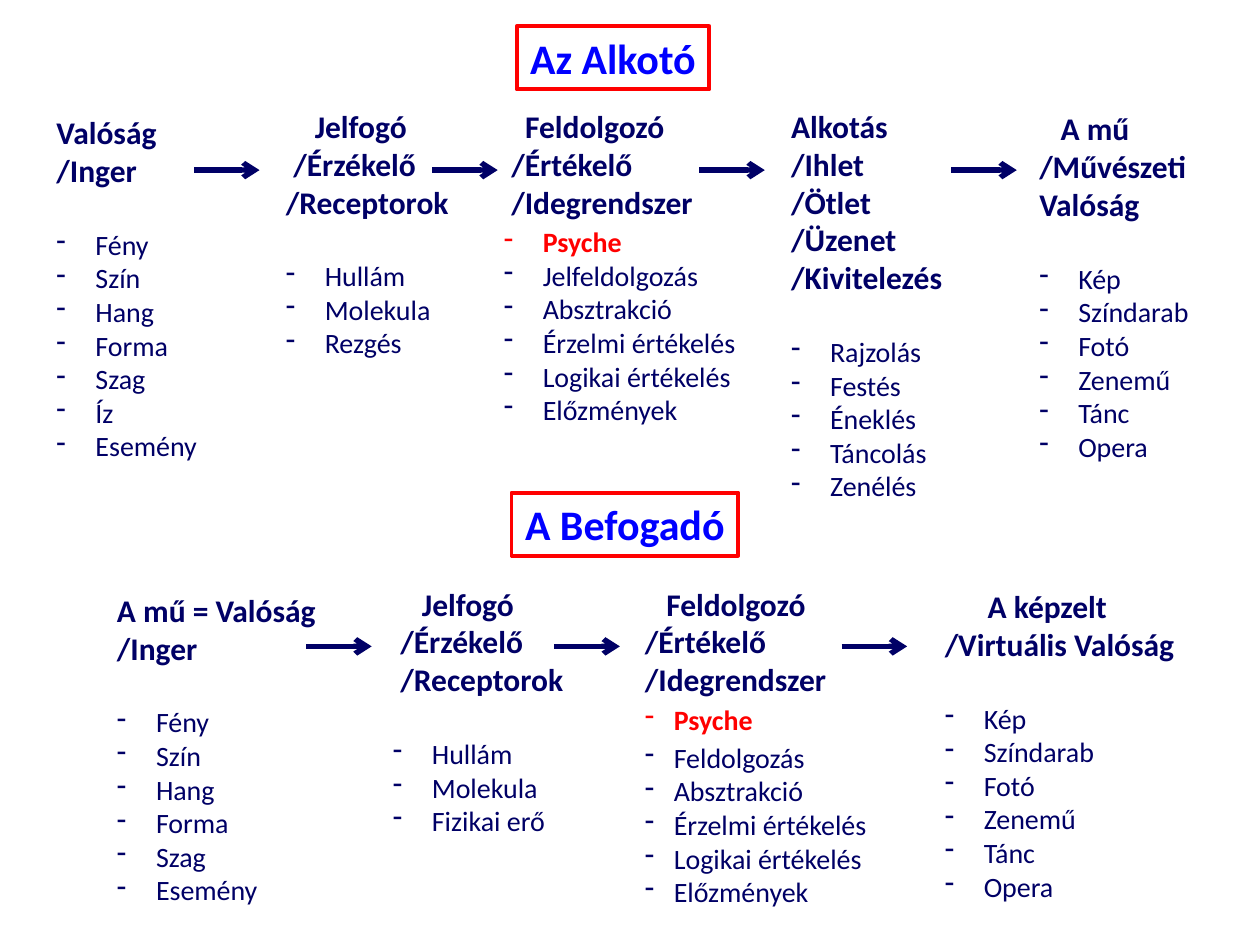
from pptx import Presentation
from pptx.dml.color import RGBColor
from pptx.enum.shapes import MSO_CONNECTOR
from pptx.enum.text import MSO_ANCHOR, MSO_AUTO_SIZE, PP_ALIGN
from pptx.oxml.ns import qn
from pptx.util import Inches, Pt
from lxml.etree import SubElement

NAVY = RGBColor(0x00, 0x00, 0x66)
BLUE = RGBColor(0x00, 0x00, 0xFF)
RED = RGBColor(0xFF, 0x00, 0x00)
FONT = "Calibri"
ARROW_LENGTH = 0.52
LIST_GAP = 22     # points, one heading line
TALL_GAP = 2.5    # points, extra lead above a tall list row

# Columns: box, headings as (indent, text), list items, list indent, tall rows.
# Tall rows follow the headings directly; other lists start after a gap.
CREATOR_COLUMNS = [
    ((0.35, 0.85, 1.33, 2.89), [(0, "Valóság"), (0, "/Inger")],
     ["Fény", "Szín", "Hang", "Forma", "Szag", "Íz", "Esemény"], 0.31, 0),
    ((2.17, 0.8, 1.5, 2.83),
     [(0.23, "Jelfogó"), (0.06, "/Érzékelő"), (0, "/Receptorok")],
     ["Hullám", "Molekula", "Rezgés"], 0.31, 0),
    ((3.9, 0.8, 2.07, 2.66),
     [(0.17, "Feldolgozó"), (0.06, "/Értékelő"), (0.06, "/Idegrendszer")],
     ["Psyche", "Jelfeldolgozás", "Absztrakció", "Érzelmi értékelés",
      "Logikai értékelés", "Előzmények"], 0.31, 1),
    ((6.18, 0.8, 1.41, 3.53),
     [(0, "Alkotás"), (0, "/Ihlet"), (0, "/Ötlet"), (0, "/Üzenet"),
      (0, "/Kivitelezés")],
     ["Rajzolás", "Festés", "Éneklés", "Táncolás", "Zenélés"], 0.31, 0),
    ((8.15, 0.82, 1.4, 3.53),
     [(0.17, "A mű"), (0, "/Művészeti"), (0, "Valóság")],
     ["Kép", "Színdarab", "Fotó", "Zenemű", "Tánc", "Opera"], 0.31, 0),
]
RECEIVER_COLUMNS = [
    ((0.83, 4.64, 1.79, 2.63), [(0, "A mű = Valóság"), (0, "/Inger")],
     ["Fény", "Szín", "Hang", "Forma", "Szag", "Esemény"], 0.31, 0),
    ((3.02, 4.59, 1.56, 2.42),
     [(0.23, "Jelfogó"), (0.06, "/Érzékelő"), (0.06, "/Receptorok")],
     ["Hullám", "Molekula", "Fizikai erő"], 0.31, 0),
    ((5.02, 4.59, 1.97, 2.69),
     [(0.17, "Feldolgozó"), (0, "/Értékelő"), (0, "/Idegrendszer")],
     ["Psyche", "Feldolgozás", "Absztrakció", "Érzelmi értékelés",
      "Logikai értékelés", "Előzmények"], 0.23, 2),
    ((7.4, 4.61, 2.04, 2.89),
     [(0.34, "A képzelt"), (0, "/Virtuális Valóság")],
     ["Kép", "Színdarab", "Fotó", "Zenemű", "Tánc", "Opera"], 0.31, 0),
]


def add_span(para, text, size, color, bold):
    span = para.add_run()
    span.text = text
    span.font.name = FONT
    span.font.size = Pt(size)
    span.font.bold = bold
    span.font.color.rgb = color


def set_indent(para, left, hanging=0):
    properties = para._p.get_or_add_pPr()
    properties.set("marL", str(Inches(left)))
    properties.set("indent", str(-Inches(hanging)))
    return properties


def add_column(slide, box, headings, items, indent, tall_rows):
    """Bold headings above a dashed list."""
    frame = slide.shapes.add_textbox(*map(Inches, box)).text_frame
    frame.word_wrap = True
    frame.margin_right = 0

    # Headings
    for number, (left, text) in enumerate(headings):
        para = frame.add_paragraph() if number else frame.paragraphs[0]
        set_indent(para, left)
        add_span(para, text, 18, NAVY, True)

    # Dashed list
    for number, text in enumerate(items):
        para = frame.add_paragraph()
        if number < tall_rows:
            para.space_before = Pt(TALL_GAP)
        elif number == 0:
            para.space_before = Pt(LIST_GAP)
        properties = set_indent(para, indent, indent)
        SubElement(properties, qn("a:buChar"), char="-")
        key_item = text == "Psyche"
        add_span(para, text, 16, RED if key_item else NAVY, key_item)


def format_banner(shape, box, text):
    """Red frame around a blue section title."""
    shape.left, shape.top, shape.width, shape.height = map(Inches, box)
    shape.fill.background()
    shape.line.color.rgb = RED
    shape.line.width = Pt(2.25)
    frame = shape.text_frame
    frame.word_wrap = False
    frame.auto_size = MSO_AUTO_SIZE.NONE
    frame.vertical_anchor = MSO_ANCHOR.MIDDLE
    para = frame.paragraphs[0]
    para.alignment = PP_ALIGN.CENTER
    add_span(para, text, 24, BLUE, True)


def add_arrow(slide, left, top):
    arrow = slide.shapes.add_connector(
        MSO_CONNECTOR.STRAIGHT, Inches(left), Inches(top),
        Inches(left + ARROW_LENGTH), Inches(top))
    arrow.line.color.rgb = NAVY
    arrow.line.width = Pt(3)
    SubElement(arrow.line._get_or_add_ln(), qn("a:tailEnd"), type="arrow")
    SubElement(arrow._element.spPr, qn("a:effectLst"))


def add_process(slide, columns, arrow_lefts, arrow_top):
    """One row of columns joined by arrows."""
    for column in columns:
        add_column(slide, *column)
    for left in arrow_lefts:
        add_arrow(slide, left, arrow_top)


def main():
    deck = Presentation()
    deck.slide_width, deck.slide_height = Inches(10), Inches(7.5)
    slide = deck.slides.add_slide(deck.slide_layouts[5])

    # Creator
    format_banner(slide.shapes.title, (4.1, 0.21, 1.53, 0.5), "Az Alkotó")
    add_process(slide, CREATOR_COLUMNS, [1.54, 3.43, 5.55, 7.55], 1.35)

    # Receiver
    receiver_box = (4.06, 3.91, 1.8, 0.5)
    receiver = slide.shapes.add_textbox(*map(Inches, receiver_box))
    format_banner(receiver, receiver_box, "A Befogadó")
    add_process(slide, RECEIVER_COLUMNS, [2.43, 4.4, 6.68], 5.13)

    deck.save("out.pptx")


if __name__ == "__main__":
    main()
